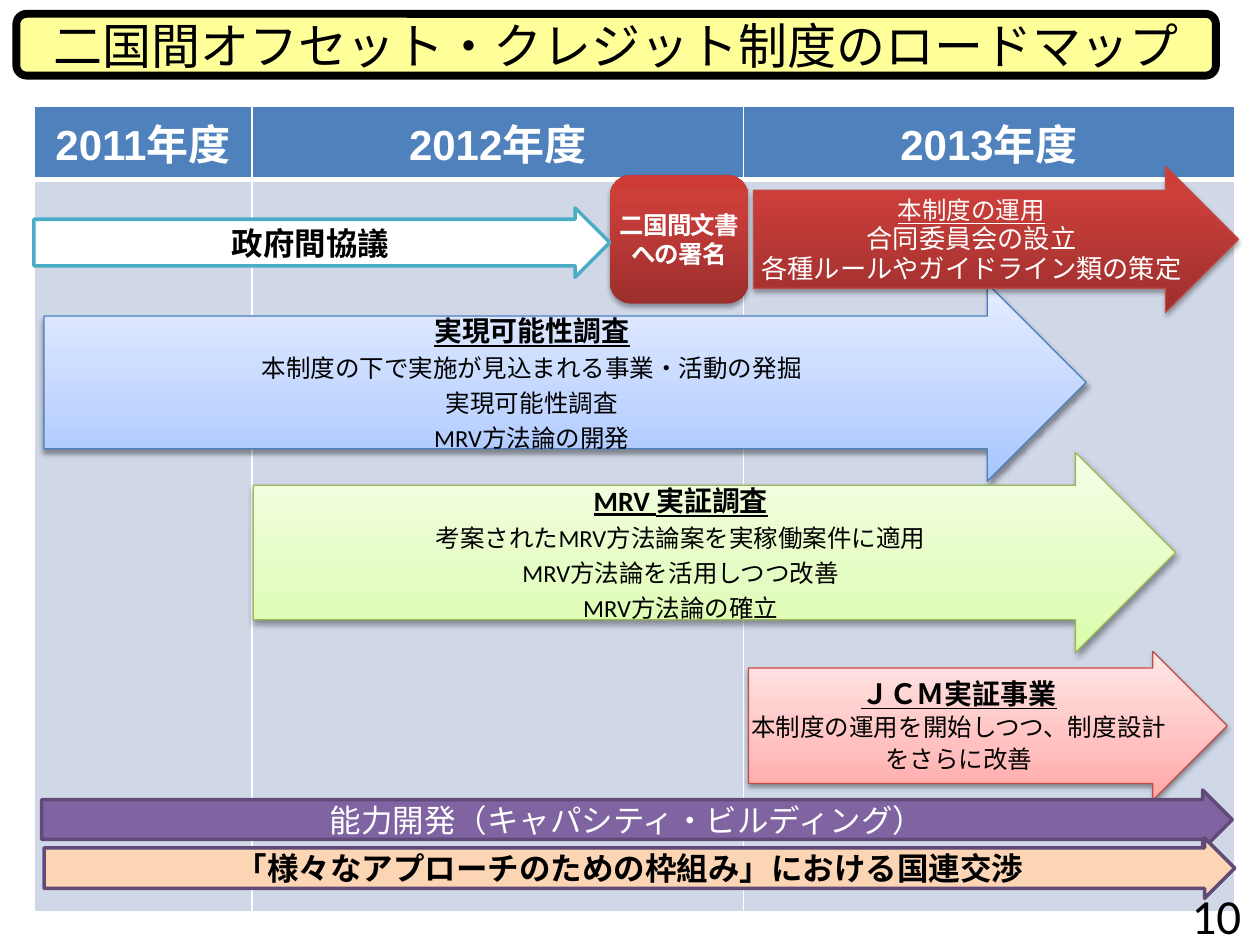
import pptx
import pptx.dml.color
import pptx.enum.dml
import pptx.enum.shapes
import pptx.enum.text
import pptx.oxml
import pptx.oxml.ns
import pptx.util
from pptx.util import Inches

COLORS = {
    "black": "000000", "white": "FFFFFF", "title": "FFFF99",
    "header": "4F81BD", "body": "D0D8E8", "purple": "8064A2",
    "purple_line": "5F4A78", "peach": "FCD5B5", "aqua": "4BACC6",
    "blue_line": "4B7EBC", "green_line": "98B955", "red_line": "BF4C48",
}
GRADIENTS = {
    "blue": [(0, "A4C4FF"), (35, "BFD4FF"), (100, "E6EEFF")],
    "green": [(0, "DAFDA7"), (35, "E4FCC2"), (100, "F5FFE7")],
    "pink": [(0, "FFA6A5"), (35, "FFC0BF"), (100, "FFE7E7")],
    "red": [(0, "9C2F2D"), (80, "CB3E3A"), (100, "CE3B37")],
}
ARROW = pptx.enum.shapes.MSO_SHAPE.RIGHT_ARROW
ROUNDED = pptx.enum.shapes.MSO_SHAPE.ROUNDED_RECTANGLE
CENTER = pptx.enum.text.PP_ALIGN.CENTER
RIGHT = pptx.enum.text.PP_ALIGN.RIGHT


def rgb(name):
    """Return the palette colour with this name."""
    return pptx.dml.color.RGBColor.from_string(COLORS[name])


def element(tag, content="", **attributes):
    """Return a DrawingML element with the given inner XML."""
    listed = " ".join(f'{key}="{value}"' for key, value in attributes.items())
    return pptx.oxml.parse_xml(
        f'<a:{tag} {pptx.oxml.ns.nsdecls("a")} {listed}>{content}</a:{tag}>')


def add_span(para, text, size, color="black", bold=False, underline=False, font="Calibri"):
    """Add one formatted run to a paragraph."""
    span = para.add_run()
    span.text = text
    span.font.name = font
    span.font.size = pptx.util.Pt(size)
    span.font.bold = bold
    span.font.underline = underline
    span.font.color.rgb = rgb(color)
    return span


def write_lines(box, lines, color="black", inset=0.1, spacing=None, align=CENTER, inset_y=0):
    """Write (text, size, bold, underline) lines, one paragraph each."""
    frame = box.text_frame
    frame.word_wrap = True
    frame.vertical_anchor = pptx.enum.text.MSO_ANCHOR.MIDDLE
    frame.margin_left = frame.margin_right = Inches(inset)
    frame.margin_top = frame.margin_bottom = Inches(inset_y)
    for index, (text, size, bold, underline) in enumerate(lines):
        para = frame.add_paragraph() if index else frame.paragraphs[0]
        para.alignment = align
        if spacing:
            para.line_spacing = pptx.util.Pt(spacing)
        add_span(para, text, size, color, bold, underline)


def add_shape(page, kind, place, fill, line=None, width=2, adjust=None):
    """Add a preset shape with a solid fill, or a shaded one with a shadow."""
    box = page.shapes.add_shape(kind, *map(Inches, place))
    box.shadow.inherit = False
    if adjust:
        box.adjustments[0] = adjust
    if fill in GRADIENTS:
        shade(box, fill)
    else:
        box.fill.solid()
        box.fill.fore_color.rgb = rgb(fill)
    if line:
        box.line.color.rgb = rgb(line)
        box.line.width = pptx.util.Pt(width)
    else:
        box.line.fill.background()
    return box


def shade(box, name):
    """Give a shape a bottom-to-top gradient and a soft shadow below."""
    box.fill.gradient()
    box.fill.gradient_angle = 90
    properties = box._element.spPr
    stops = properties.find(".//" + pptx.oxml.ns.qn("a:gsLst"))
    for stop in list(stops):
        stops.remove(stop)
    for position, color in GRADIENTS[name]:
        stops.append(element("gs", f'<a:srgbClr val="{color}"/>', pos=position * 1000))
    alpha, distance = (35, 1.8) if name == "red" else (38, 1.6)
    content = f'<a:srgbClr val="{COLORS["black"]}"><a:alpha val="{alpha * 1000}"/></a:srgbClr>'
    effects = properties.find(pptx.oxml.ns.qn("a:effectLst"))
    effects.append(element("outerShdw", content, blurRad=pptx.util.Pt(3.1),
                           dist=pptx.util.Pt(distance), dir=5400000, rotWithShape=0))


def style_cell(cell, fill, bottom):
    """Set the white borders and the fill of a table cell."""
    properties = cell._tc.get_or_add_tcPr()
    line = f'<a:solidFill><a:srgbClr val="{COLORS["white"]}"/></a:solidFill>'
    for tag, width in (("lnL", 1), ("lnR", 1), ("lnT", 1), ("lnB", bottom)):
        properties.append(element(tag, line, w=pptx.util.Pt(width)))
    cell.fill.solid()
    cell.fill.fore_color.rgb = rgb(fill)


def add_years(page):
    """Add the table of fiscal years behind the arrows."""
    place = map(Inches, (0.27, 0.84, 9.53, 6.31))
    table = page.shapes.add_table(2, 3, *place).table
    for column, width in zip(table.columns, (1.73, 3.9, 3.9)):
        column.width = Inches(width)
    for row, height in zip(table.rows, (0.5, 5.81)):
        row.height = Inches(height)
    for index, year in enumerate((2011, 2012, 2013)):
        head = table.cell(0, index)
        style_cell(head, "header", 3)
        style_cell(table.cell(1, index), "body", 1)
        para = head.text_frame.paragraphs[0]
        para.alignment = CENTER
        add_span(para, f"{year}年度", 24, "white", True, font="Arial")


def add_stage(page, place, fill, line, title, details, spacing=20, inset=0.1, adjust=0.671):
    """Add a shaded arrow with an underlined title and detail lines."""
    box = add_shape(page, ARROW, place, fill, line, 0.75, adjust)
    lines = [(title, 16, True, True)] + [(text, 14, False, False) for text in details]
    write_lines(box, lines, inset=inset, spacing=spacing)


def add_band(page, place, fill, line, text, color="black", bold=True):
    """Add a flat arrow with one line of text."""
    box = add_shape(page, ARROW, place, fill, line, adjust=0.671)
    write_lines(box, [(text, 18, bold, False)], color)


def add_title(page):
    """Add the framed slide title."""
    box = add_shape(page, ROUNDED, (0.13, 0.11, 9.52, 0.49), "title", "black", 4.5)
    write_lines(box, [("二国間オフセット・クレジット制度のロードマップ", 28, False, False)], inset_y=0.05)
    box.text_frame.word_wrap = False


def add_signing(page):
    """Add the box for the signing of the bilateral document."""
    box = add_shape(page, ROUNDED, (4.84, 1.39, 1.1, 1.02), "red")
    write_lines(box, [("二国間文書への署名", 14, True, False)], "white", 0)
    box.text_frame.paragraphs[0].runs[0].font._element.set("spc", "-50")


def add_operation(page):
    """Add the arrow for the operation of the scheme."""
    box = add_shape(page, ARROW, (5.98, 1.32, 3.85, 1.16), "red", "red_line", 0.75, 0.671)
    lines = [("本制度の運用", 14, False, True), ("合同委員会の設立", 15, False, False),
             ("各種ルールやガイドライン類の策定", 15, False, False)]
    write_lines(box, lines, "white", 0.04, 17)


def add_page_number(page):
    """Add the page number at the lower right."""
    box = page.shapes.add_textbox(*map(Inches, (7.62, 7.06, 2.33, 0.4)))
    write_lines(box, [("10", 28, False, False)], align=RIGHT, inset_y=0.05)


def main():
    """Build the roadmap slide and save it."""
    deck = pptx.Presentation()
    deck.slide_width, deck.slide_height = Inches(10), Inches(7.5)
    page = deck.slides.add_slide(deck.slide_layouts[6])
    add_title(page)
    add_years(page)
    add_stage(page, (0.35, 2.25, 8.27, 1.57), "blue", "blue_line", "実現可能性調査",
              ["本制度の下で実施が見込まれる事業・活動の発掘", "実現可能性調査", "MRV方法論の開発"])
    add_stage(page, (2.01, 3.59, 7.32, 1.59), "green", "green_line", "MRV 実証調査",
              ["考案されたMRV方法論案を実稼働案件に適用", "MRV方法論を活用しつつ改善", "MRV方法論の確立"])
    add_stage(page, (5.94, 5.17, 3.8, 1.18), "pink", "red_line", "ＪＣＭ実証事業",
              ["本制度の運用を開始しつつ、制度設計をさらに改善"], 18, 0, 0.778)
    add_signing(page)
    add_band(page, (0.33, 6.27, 9.45, 0.47), "purple", "purple_line",
             "能力開発（キャパシティ・ビルディング）", "white", False)
    add_band(page, (0.27, 1.65, 4.57, 0.55), "white", "aqua", "政府間協議")
    add_page_number(page)
    add_operation(page)
    add_band(page, (0.35, 6.65, 9.45, 0.48), "peach", "purple_line",
             "「様々なアプローチのための枠組み」における国連交渉")
    deck.save("out.pptx")


if __name__ == "__main__":
    main()
